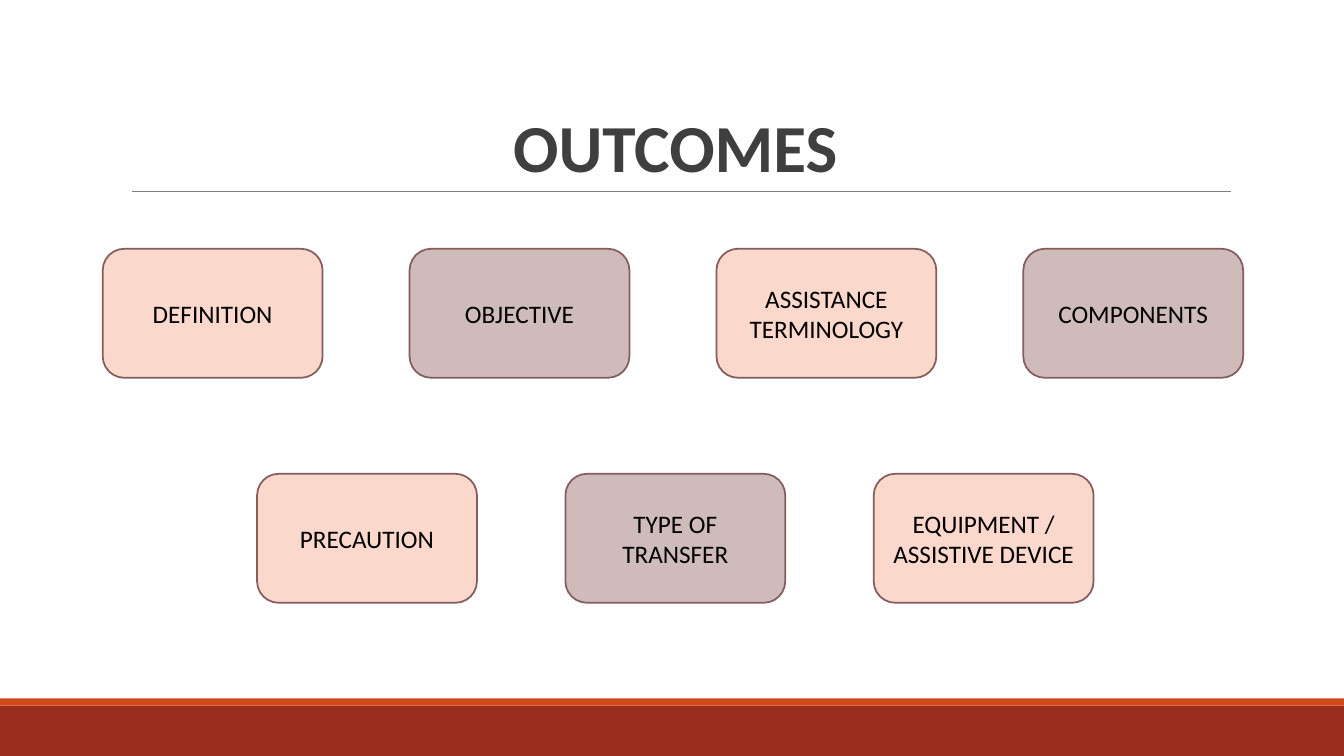
from lxml import etree
from pptx import Presentation
from pptx.dml.color import RGBColor
from pptx.enum.shapes import MSO_CONNECTOR, MSO_SHAPE
from pptx.enum.text import MSO_ANCHOR, MSO_AUTO_SIZE, PP_ALIGN
from pptx.oxml.ns import qn
from pptx.util import Cm, Pt

RECT = MSO_SHAPE.RECTANGLE
ROUND = MSO_SHAPE.ROUNDED_RECTANGLE
LINE = MSO_CONNECTOR.STRAIGHT
CENTER = PP_ALIGN.CENTER
MIDDLE = MSO_ANCHOR.MIDDLE
BOTTOM = MSO_ANCHOR.BOTTOM
NO_FIT = MSO_AUTO_SIZE.NONE

WHITE = RGBColor(0xFF, 0xFF, 0xFF)
BLACK = RGBColor(0x00, 0x00, 0x00)
DARK = RGBColor(0x3F, 0x3F, 0x3F)
GRAY = RGBColor(0x7F, 0x7F, 0x7F)
RED = RGBColor(0x9B, 0x2D, 0x1F)
ORANGE = RGBColor(0xD3, 0x48, 0x17)
PEACH = RGBColor(0xFA, 0xD8, 0xCB)
MAUVE = RGBColor(0xD0, 0xBB, 0xBB)
PLUM = RGBColor(0x85, 0x5D, 0x5D)

FONT = "Calibri"
WIDTH, HEIGHT = Cm(33.87), Cm(19.05)
CARD_W, CARD_H = Cm(5.54), Cm(3.25)
TOP_ROW = ["DEFINITION", "OBJECTIVE", "ASSISTANCE TERMINOLOGY", "COMPONENTS"]
LOW_ROW = ["PRECAUTION", "TYPE OF TRANSFER", "EQUIPMENT / ASSISTIVE DEVICE"]


def set_text(frame, text, size, color, anchor, bold=False):
    frame.text = text
    frame.word_wrap = True
    frame.auto_size = NO_FIT
    frame.vertical_anchor = anchor
    para = frame.paragraphs[0]
    para.alignment = CENTER
    font = para.runs[0].font
    font.name, font.size, font.bold = FONT, Pt(size), bold
    font.color.rgb = color


def add_block(slide, kind, fill, left, top, width, height):
    block = slide.shapes.add_shape(kind, left, top, width, height)
    block.shadow.inherit = False
    block.fill.solid()
    block.fill.fore_color.rgb = fill
    block.line.fill.background()
    return block


def add_footer(slide, left, top, width, height):
    strip = Cm(0.18)
    add_block(slide, RECT, RED, left, top + strip, width, height - strip)
    add_block(slide, RECT, ORANGE, left, top, width, strip)


def add_title(slide, left, top, width, height):
    title = slide.shapes.title
    title.left, title.top, title.width, title.height = left, top, width, height
    set_text(title.text_frame, "OUTCOMES", 48, DARK, BOTTOM, True)
    title.text_frame.paragraphs[0].line_spacing = 0.85
    base = top + height
    start = left + Cm(0.28)
    rule = slide.shapes.add_connector(LINE, start, base, start + Cm(27.69), base)
    rule.line.color.rgb = GRAY
    rule.line.width = Pt(0.75)
    etree.SubElement(rule.element.spPr, qn("a:effectLst"))


def add_row(slide, labels, left, top, width):
    step = (width - CARD_W) // (len(labels) - 1)
    for index, label in enumerate(labels):
        fill = MAUVE if index % 2 else PEACH
        card = add_block(slide, ROUND, fill, left + index * step, top, CARD_W, CARD_H)
        card.line.color.rgb = PLUM
        card.line.width = Pt(1.25)
        set_text(card.text_frame, label, 18, BLACK, MIDDLE)


def main():
    deck = Presentation()
    deck.slide_width, deck.slide_height = WIDTH, HEIGHT
    slide = deck.slides.add_slide(deck.slide_layouts[5])
    slide.background.fill.solid()
    slide.background.fill.fore_color.rgb = WHITE
    foot = Cm(17.6)
    add_footer(slide, 0, foot, WIDTH, HEIGHT - foot)
    add_title(slide, Cm(3.05), Cm(0.79), Cm(27.94), Cm(4.04))
    add_row(slide, TOP_ROW, Cm(2.59), Cm(6.27), Cm(28.74))
    add_row(slide, LOW_ROW, Cm(6.48), Cm(11.94), Cm(21.08))
    deck.save("out.pptx")


if __name__ == "__main__":
    main()
